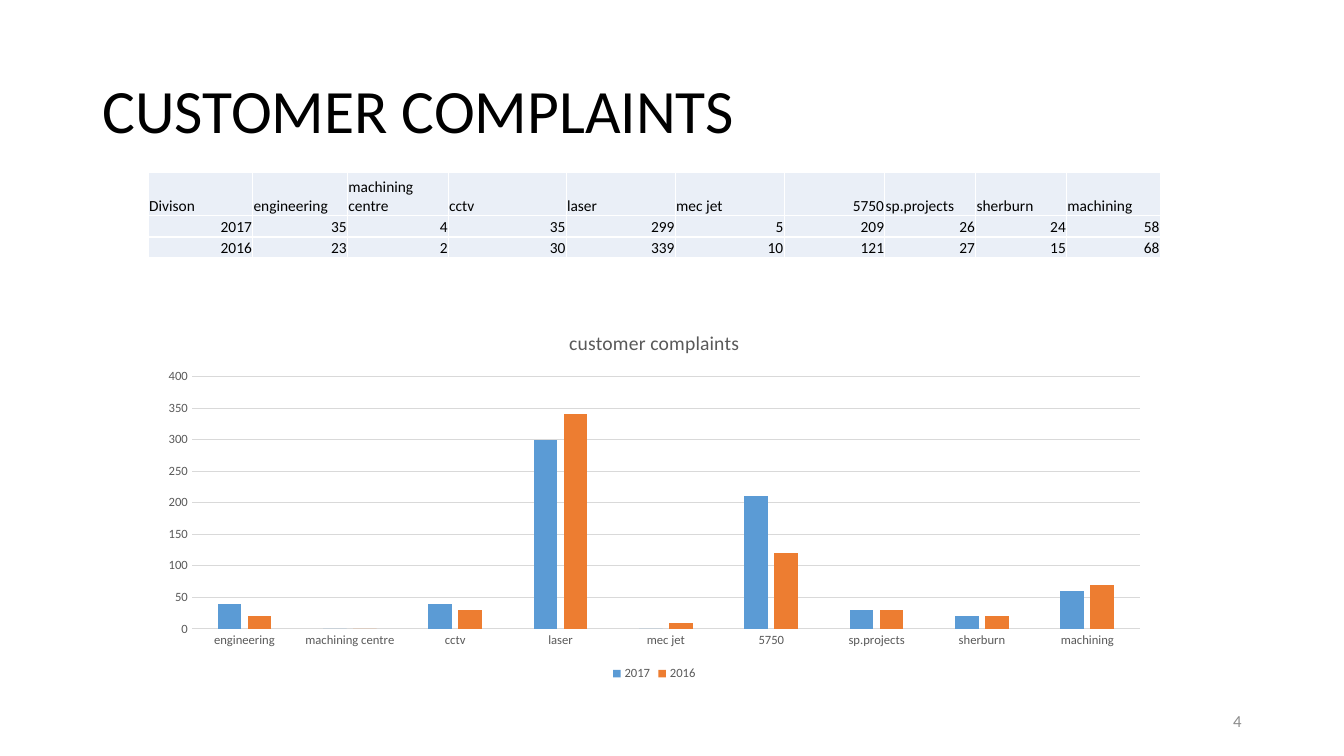
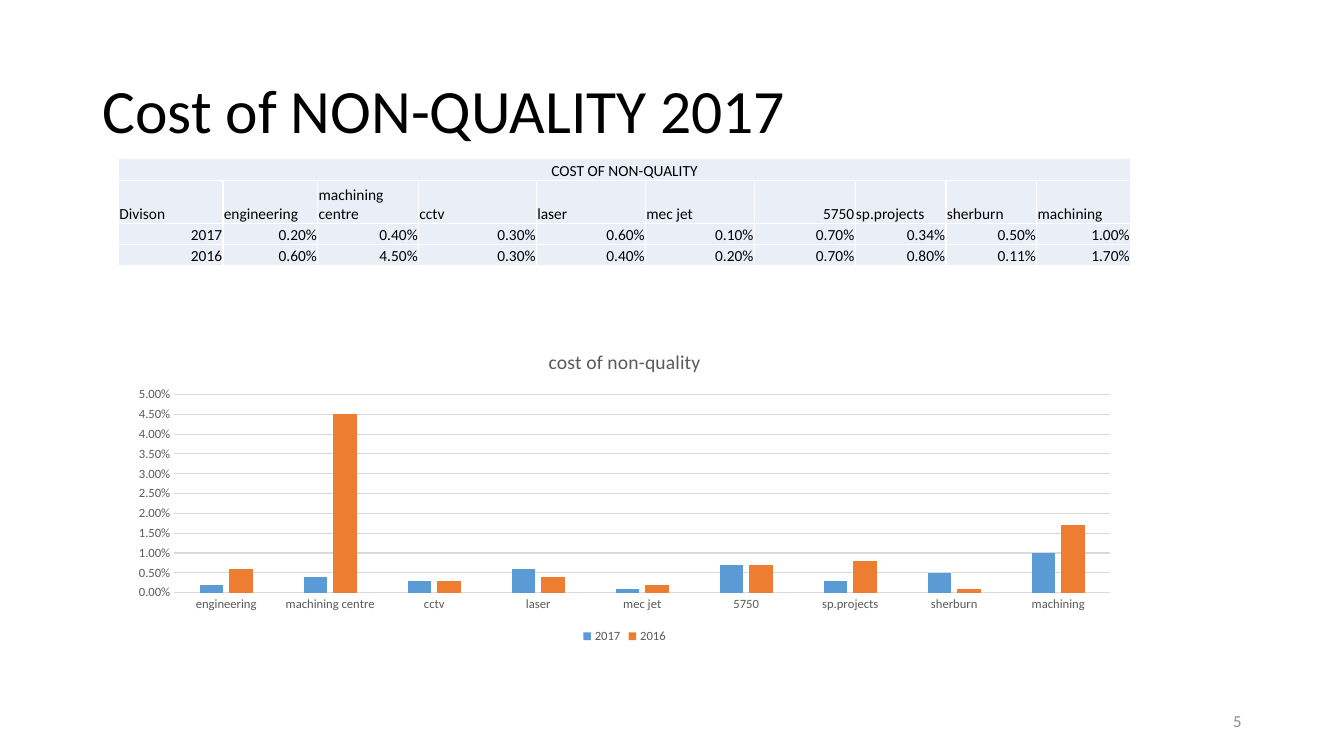
from dataclasses import dataclass

from lxml.etree import SubElement
from pptx import Presentation
from pptx.chart.data import CategoryChartData
from pptx.dml.color import RGBColor
from pptx.enum.chart import XL_CHART_TYPE, XL_LEGEND_POSITION, XL_TICK_MARK
from pptx.enum.text import MSO_ANCHOR, MSO_AUTO_SIZE, PP_ALIGN
from pptx.oxml.ns import qn
from pptx.util import Cm, Pt


@dataclass(frozen=True)
class Theme:
    font: str = "Calibri"
    ink: str = "000000"
    soft: str = "595959"
    pale: str = "8C8C8C"
    grid: str = "D9D9D9"
    cell: str = "EAEFF7"
    edge: str = "FFFFFF"
    bars: tuple = ("5B9BD5", "ED7D31")
    head: int = 44
    title: int = 14
    foot: int = 12
    body: int = 11
    chart: int = 10
    label: int = 9


THEME = Theme()
LEFT, RIGHT, MID = PP_ALIGN.LEFT, PP_ALIGN.RIGHT, PP_ALIGN.CENTER

# Shared data, column widths and row heights in cm
UNITS = ["engineering", "machining centre", "cctv", "laser", "mec jet",
         "5750", "sp.projects", "sherburn", "machining"]
YEARS = ["2017", "2016"]
COLS = [2.63, 2.39, 2.54, 2.97, 2.75, 2.74, 2.54, 2.29, 2.29, 2.36]
WIDTH = sum(COLS)
TOP, TALL, ROW = 0.55, 1.09, 0.53

COUNTS = [[35, 4, 35, 299, 5, 209, 26, 24, 58],
          [23, 2, 30, 339, 10, 121, 27, 15, 68]]
COSTS = [[0.2, 0.4, 0.3, 0.6, 0.1, 0.7, 0.34, 0.5, 1.0],
         [0.6, 4.5, 0.3, 0.4, 0.2, 0.7, 0.8, 0.11, 1.7]]


def style(font, size, color):
    font.name = THEME.font
    font.size = Pt(size)
    font.bold = False
    font.color.rgb = RGBColor.from_string(color)


def write(frame, text, size=THEME.body, color=THEME.ink, align=LEFT,
          space=1.0):
    para = frame.paragraphs[0]
    para.alignment = align
    para.line_spacing = space
    run = para.add_run()
    run.text = text
    style(run.font, size, color)


def frame_up(frame):
    frame.word_wrap = True
    frame.auto_size = MSO_AUTO_SIZE.NONE
    frame.vertical_anchor = MSO_ANCHOR.MIDDLE


# Title and page number
def add_page(deck, title, number):
    slide = deck.slides.add_slide(deck.slide_layouts[5])
    head = slide.shapes.title
    head.left, head.top = Cm(2.33), Cm(1.01)
    head.width, head.height = Cm(29.21), Cm(3.68)
    frame_up(head.text_frame)
    write(head.text_frame, title, size=THEME.head, space=0.9)
    foot = slide.shapes.add_textbox(Cm(23.92), Cm(17.65), Cm(7.62), Cm(1.01))
    frame_up(foot.text_frame)
    write(foot.text_frame, str(number), size=THEME.foot, color=THEME.pale,
          align=RIGHT)
    return slide


# Table
def add_edges(cell):
    props = cell._tc.get_or_add_tcPr()
    for side in ("L", "R", "T", "B"):
        line = SubElement(props, qn(f"a:ln{side}"), w=str(Pt(1)))
        fill = SubElement(line, qn("a:solidFill"))
        SubElement(fill, qn("a:srgbClr"), val=THEME.edge)


def format_cell(cell):
    add_edges(cell)
    cell.fill.solid()
    cell.fill.fore_color.rgb = RGBColor.from_string(THEME.cell)
    cell.margin_left = cell.margin_right = cell.margin_top = Cm(0.02)
    cell.margin_bottom = 0
    cell.vertical_anchor = MSO_ANCHOR.BOTTOM


def is_num(text):
    return text.rstrip("%").replace(".", "").isdigit()


def add_grid(slide, left, top, data, mask, banner=None):
    rows = [["Divison"] + UNITS]
    rows += [[year] + [mask.format(val) for val in vals]
             for year, vals in zip(YEARS, data)]
    tall = [TALL, ROW, ROW]
    if banner:
        rows.insert(0, [banner] + [""] * len(UNITS))
        tall.insert(0, TOP)
    table = slide.shapes.add_table(len(rows), len(COLS), Cm(left), Cm(top),
                                   Cm(WIDTH), Cm(sum(tall))).table
    table.first_row = table.horz_banding = False
    for col, width in zip(table.columns, COLS):
        col.width = Cm(width)
    for row, high, texts in zip(table.rows, tall, rows):
        row.height = Cm(high)
        for cell, text in zip(row.cells, texts):
            format_cell(cell)
            if text:
                align = (MID if text == banner else
                         RIGHT if is_num(text) else LEFT)
                write(cell.text_frame, text, align=align)
    if banner:
        table.cell(0, 0).merge(table.cell(0, len(COLS) - 1))


# Chart
def format_axis(axis):
    axis.major_tick_mark = axis.minor_tick_mark = XL_TICK_MARK.NONE
    style(axis.tick_labels.font, THEME.label, THEME.soft)


def rule(line):
    line.color.rgb = RGBColor.from_string(THEME.grid)
    line.width = Pt(0.75)


def add_bars(slide, left, top, height, title, data, mask, peak, step):
    source = CategoryChartData(number_format=mask)
    source.categories = UNITS
    for year, vals in zip(YEARS, data):
        source.add_series(year, vals)
    chart = slide.shapes.add_chart(
        XL_CHART_TYPE.COLUMN_CLUSTERED, Cm(left), Cm(top), Cm(WIDTH),
        Cm(height), source).chart
    style(chart.font, THEME.chart, THEME.ink)
    chart.has_title = True
    write(chart.chart_title.text_frame, title, size=THEME.title,
          color=THEME.soft, align=MID)
    chart.chart_title.include_in_layout = False

    chart.has_legend = True
    chart.legend.position = XL_LEGEND_POSITION.BOTTOM
    chart.legend.include_in_layout = False
    style(chart.legend.font, THEME.label, THEME.soft)

    names, scale = chart.category_axis, chart.value_axis
    format_axis(names)
    format_axis(scale)
    rule(names.format.line)
    rule(scale.major_gridlines.format.line)
    scale.format.line.fill.background()
    scale.minimum_scale, scale.maximum_scale = 0, peak
    scale.major_unit = step
    scale.tick_labels.number_format = mask
    scale.tick_labels.number_format_is_linked = False

    plot = chart.plots[0]
    plot.vary_by_categories = False
    plot.gap_width, plot.overlap = 219, -27
    for bar, color in zip(plot.series, THEME.bars):
        bar.format.fill.solid()
        bar.format.fill.fore_color.rgb = RGBColor.from_string(color)


def main():
    deck = Presentation()
    deck.slide_width, deck.slide_height = Cm(33.87), Cm(19.05)

    # Complaints, charted to the nearest ten
    slide = add_page(deck, "CUSTOMER COMPLAINTS", 4)
    add_grid(slide, 3.74, 4.35, COUNTS, "{}")
    tens = [[round(val, -1) for val in vals] for vals in COUNTS]
    add_bars(slide, 3.74, 7.89, 9.37, "customer complaints", tens,
             "General", 400, 50)

    # Cost of non-quality, charted to a tenth of a percent
    slide = add_page(deck, "Cost of NON-QUALITY 2017", 5)
    add_grid(slide, 2.99, 4, COSTS, "{:.2f}%", "COST OF NON-QUALITY")
    shares = [[round(val / 100, 3) for val in vals] for vals in COSTS]
    add_bars(slide, 2.99, 8.4, 7.92, "cost of non-quality", shares,
             "0.00%", 0.05, 0.005)

    deck.save("out.pptx")


if __name__ == "__main__":
    main()
